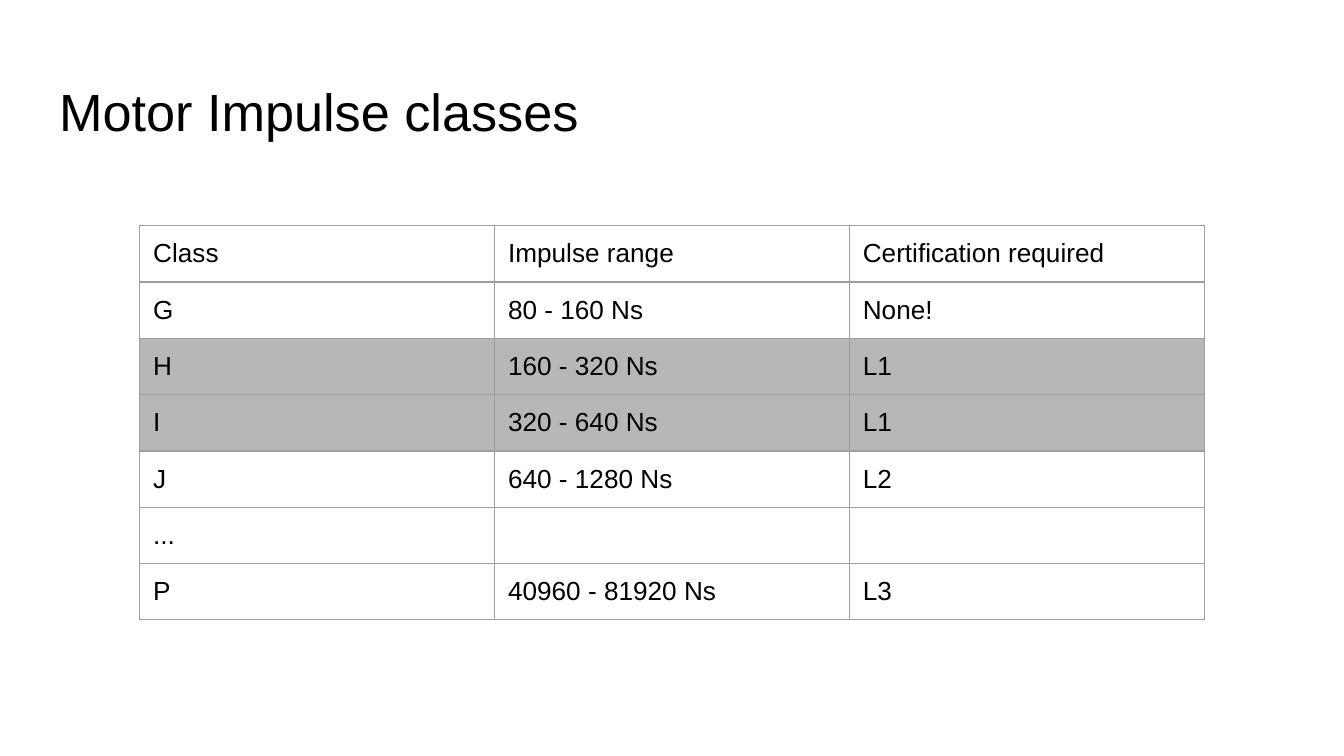
import dataclasses

import lxml.etree
import pptx
import pptx.dml.color
import pptx.enum.text
import pptx.oxml.ns
import pptx.util

EMU_PER_PX = 4572  # 200 px to the inch


@dataclasses.dataclass(frozen=True)
class Theme:
    font: str = "Arial"
    text: str = "000000"
    page: str = "FFFFFF"
    highlight: str = "B7B7B7"
    border: str = "9E9E9E"
    border_width: float = 0.75
    title_size: int = 28
    table_size: int = 14
    inset: int = 20


THEME = Theme()
PAGE_SIZE = (2000, 1125)
TITLE_BOX = (68, 98, 1864, 126)
TABLE_BOX = (208, 336, 1584, 586)
TITLE = "Motor Impulse classes"
ROWS = [
    ("Class", "Impulse range", "Certification required"),
    ("G", "80 - 160 Ns", "None!"),
    ("H", "160 - 320 Ns", "L1"),
    ("I", "320 - 640 Ns", "L1"),
    ("J", "640 - 1280 Ns", "L2"),
    ("...", "", ""),
    ("P", "40960 - 81920 Ns", "L3"),
]
HIGHLIGHTED_CLASSES = {"H", "I"}


def px(length):
    return pptx.util.Emu(length * EMU_PER_PX)


def color(value):
    return pptx.dml.color.RGBColor.from_string(value)


def set_attributes(target, values):
    for name, value in values.items():
        setattr(target, name, value)


def set_insets(target):
    for side in ("left", "right", "top", "bottom"):
        setattr(target, f"margin_{side}", px(THEME.inset))


def add_element(parent, name, **values):
    return lxml.etree.SubElement(parent, pptx.oxml.ns.qn(f"a:{name}"), **values)


def write_text(frame, text, size):
    para = frame.paragraphs[0]
    para.alignment = pptx.enum.text.PP_ALIGN.LEFT
    if not text:
        # An empty paragraph keeps its font and size in its end mark
        mark = add_element(para._p, "endParaRPr", sz=str(size * 100))
        add_element(mark, "latin", typeface=THEME.font)
        return
    span = para.add_run()
    span.text = text
    set_attributes(span.font, {"name": THEME.font, "size": pptx.util.Pt(size), "bold": False})
    span.font.color.rgb = color(THEME.text)


def add_borders(cell):
    properties = cell._tc.get_or_add_tcPr()
    width = str(int(pptx.util.Pt(THEME.border_width)))
    for side in ("lnL", "lnR", "lnT", "lnB"):
        line = add_element(properties, side, w=width)
        add_element(add_element(line, "solidFill"), "srgbClr", val=THEME.border)


def place_title(page, box):
    title = page.shapes.title
    set_attributes(title, dict(zip(("left", "top", "width", "height"), map(px, box))))
    frame = title.text_frame
    set_attributes(frame, {
        "word_wrap": True,
        "auto_size": pptx.enum.text.MSO_AUTO_SIZE.NONE,
        "vertical_anchor": pptx.enum.text.MSO_ANCHOR.TOP,
    })
    set_insets(frame)
    write_text(frame, TITLE, THEME.title_size)


def place_table(page, box):
    # Equal columns and rows follow from the box
    table = page.shapes.add_table(len(ROWS), len(ROWS[0]), *map(px, box)).table
    set_attributes(table, {"first_row": False, "horz_banding": False})
    for row, values in zip(table.rows, ROWS):
        for cell, text in zip(row.cells, values):
            set_insets(cell)
            cell.vertical_anchor = pptx.enum.text.MSO_ANCHOR.TOP
            add_borders(cell)
            cell.fill.solid()
            highlighted = values[0] in HIGHLIGHTED_CLASSES
            cell.fill.fore_color.rgb = color(THEME.highlight if highlighted else THEME.page)
            write_text(cell.text_frame, text, THEME.table_size)


def main():
    deck = pptx.Presentation()
    deck.slide_width, deck.slide_height = map(px, PAGE_SIZE)
    page = deck.slides.add_slide(deck.slide_layouts.get_by_name("Title Only"))
    page.background.fill.solid()
    page.background.fill.fore_color.rgb = color(THEME.page)
    place_title(page, TITLE_BOX)
    place_table(page, TABLE_BOX)
    deck.save("out.pptx")


if __name__ == "__main__":
    main()
